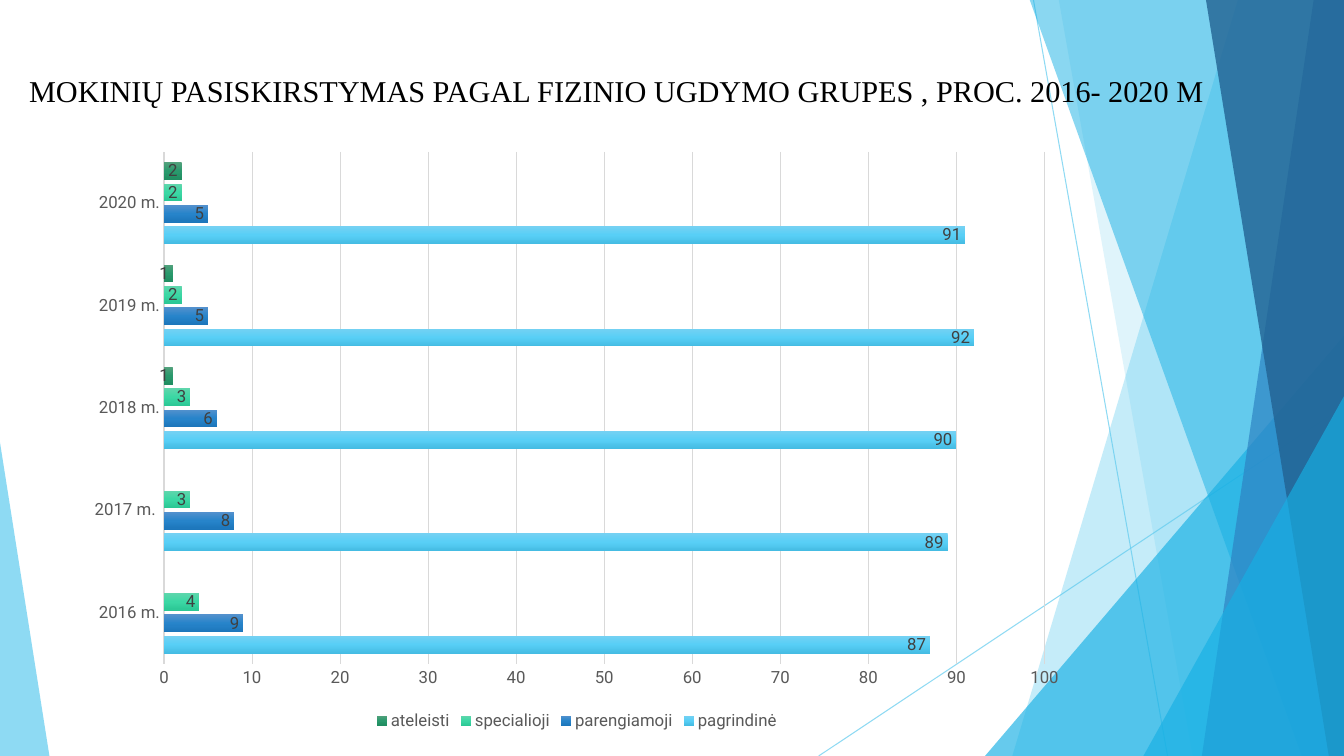
from dataclasses import dataclass

from lxml.etree import SubElement
from pptx import Presentation
from pptx.chart.data import CategoryChartData
from pptx.dml.color import RGBColor
from pptx.enum.chart import XL_CHART_TYPE, XL_LABEL_POSITION, XL_LEGEND_POSITION, XL_TICK_MARK
from pptx.enum.shapes import MSO_CONNECTOR, MSO_SHAPE
from pptx.oxml import parse_xml
from pptx.oxml.ns import nsdecls, qn
from pptx.util import Inches, Pt

COLORS = {
    "sky": "5FCBEF",
    "cyan": "17B0E4",
    "blue": "2E83C3",
    "navy": "226292",
    "title": "000000",
    "axis_text": "595959",
    "label": "404040",
    "grid": "D9D9D9",
}
WIDTH, HEIGHT, BLEED = 13.33, 7.5, -0.01
CHART_FONT = "Roboto"


@dataclass
class Ray:
    start: tuple[float, float]
    end: tuple[float, float]


@dataclass
class Band:
    """A facet reaching the right slide edge, slanting from top_x to bottom_x."""
    top_x: float
    bottom_x: float
    color: str
    opacity: int


@dataclass
class Corner:
    """A right triangle standing on the bottom edge, its apex at 0 or 1."""
    left: float
    top: float
    width: float
    apex: int
    color: str
    opacity: int


@dataclass
class Group:
    name: str
    percents: tuple[int | None, ...]
    gradient: tuple[str, str, str]


RAYS = [Ray((10.25, 0), (11.58, HEIGHT)), Ray((WIDTH, 4.03), (8.12, HEIGHT))]
FACETS = [
    Band(12.28, 10.04, "sky", 36),
    Band(10.5, 11.83, "sky", 20),
    Corner(9.77, 3.33, 3.56, 1, "cyan", 66),
    Band(10.21, 12.91, "cyan", 50),
    Band(13.03, 11.92, "blue", 70),
    Band(11.96, 13.18, "navy", 80),
    Corner(11.34, 3.93, 1.99, 1, "cyan", 66),
    Corner(0, 4.39, 0.49, 0, "sky", 70),
]
YEARS = ["2016 m.", "2017 m. ", "2018 m.", "2019 m.", "2020 m."]
GROUPS = [
    Group("pagrindinė", (87, 89, 90, 92, 91), ("75D1F3", "58CFF6", "45BCE3")),
    Group("parengiamoji", (9, 8, 6, 5, 5), ("5491CD", "2784CA", "1C76BB")),
    Group("specialioji", (4, 3, 3, 2, 2), ("60D6AC", "3BD7A4", "2CC795")),
    Group("ateleisti", (None, None, 1, 1, 2), ("54A17D", "29996C", "208D61")),
]


def rgb(name: str) -> RGBColor:
    return RGBColor.from_string(COLORS[name])


def set_opacity(properties, percent: int) -> None:
    for color in properties.iter(qn("a:srgbClr")):
        SubElement(color, qn("a:alpha"), val=str(percent * 1000))


def draw_ray(slide, ray: Ray) -> None:
    line = slide.shapes.add_connector(
        MSO_CONNECTOR.STRAIGHT, *map(Inches, ray.start + ray.end))
    line.line.color.rgb = rgb("sky")
    line.line.width = Pt(0.75)
    properties = line._element.spPr
    set_opacity(properties, 70)
    SubElement(properties, qn("a:effectLst"))


def draw_facet(slide, facet: Band | Corner) -> None:
    if isinstance(facet, Band):
        builder = slide.shapes.build_freeform(
            Inches(facet.top_x), Inches(BLEED), scale=1.0)
        corners = [(WIDTH, BLEED), (WIDTH, HEIGHT), (facet.bottom_x, HEIGHT)]
        builder.add_line_segments(
            [(Inches(x), Inches(y)) for x, y in corners], close=True)
        shape = builder.convert_to_shape()
    else:
        shape = slide.shapes.add_shape(
            MSO_SHAPE.ISOSCELES_TRIANGLE, Inches(facet.left), Inches(facet.top),
            Inches(facet.width), Inches(HEIGHT - facet.top))
        shape.adjustments[0] = facet.apex
    shape.shadow.inherit = False
    shape.fill.solid()
    shape.fill.fore_color.rgb = rgb(facet.color)
    shape.line.fill.background()
    set_opacity(shape._element.spPr, facet.opacity)


def draw_title(slide, wording: str) -> None:
    title = slide.shapes.add_textbox(
        Inches(0.19), Inches(0.67), Inches(12.64), Inches(0.72))
    title.text_frame.word_wrap = True
    run = title.text_frame.paragraphs[0].add_run()
    run.text = wording
    run.font.size = Pt(21.6)
    run.font.name = "Times New Roman"
    run.font.color.rgb = rgb("title")


def style_font(font, color: str, size: float = 12) -> None:
    font.size = Pt(size)
    font.name = CHART_FONT
    font.color.rgb = rgb(color)


def fill_gradient(series, colors: tuple[str, str, str]) -> None:
    """Fill the bars with three stops running from top to bottom."""
    stops = "".join(
        f'<a:gs pos="{index * 50000}"><a:srgbClr val="{color}"/></a:gs>'
        for index, color in enumerate(colors))
    properties = series._element.get_or_add_spPr()
    properties.insert(0, parse_xml(
        f'<a:gradFill {nsdecls("a")} rotWithShape="1"><a:gsLst>{stops}</a:gsLst>'
        '<a:lin ang="5400000" scaled="0"/></a:gradFill>'))


def draw_chart(slide) -> None:
    data = CategoryChartData()
    data.categories = YEARS
    for group in GROUPS:
        data.add_series(group.name, group.percents)
    chart = slide.shapes.add_chart(
        XL_CHART_TYPE.BAR_CLUSTERED, Inches(0.74), Inches(1.39),
        Inches(9.96), Inches(5.9), data).chart
    style_font(chart.font, "title", 10)
    chart.has_title = False
    chart.has_legend = True
    chart.legend.position = XL_LEGEND_POSITION.BOTTOM
    chart.legend.include_in_layout = False
    style_font(chart.legend.font, "axis_text")

    years, percents = chart.category_axis, chart.value_axis
    for axis in (years, percents):
        axis.major_tick_mark = axis.minor_tick_mark = XL_TICK_MARK.NONE
        style_font(axis.tick_labels.font, "axis_text")
    years.format.line.color.rgb = rgb("grid")
    years.format.line.width = Pt(1)
    percents.format.line.fill.background()
    percents.minimum_scale, percents.maximum_scale = 0, 100
    percents.major_unit = 10
    percents.has_major_gridlines = True
    percents.major_gridlines.format.line.color.rgb = rgb("grid")
    percents.major_gridlines.format.line.width = Pt(0.75)

    plot = chart.plots[0]
    plot.vary_by_categories = False
    plot.gap_width, plot.overlap = 115, -20
    for series, group in zip(plot.series, GROUPS):
        series.invert_if_negative = False
        fill_gradient(series, group.gradient)
        labels = series.data_labels
        labels.show_value = True
        labels.position = XL_LABEL_POSITION.INSIDE_END
        style_font(labels.font, "label")


def main() -> None:
    deck = Presentation()
    deck.slide_width, deck.slide_height = Inches(WIDTH), Inches(HEIGHT)
    slide = deck.slides.add_slide(deck.slide_layouts[6])
    for ray in RAYS:
        draw_ray(slide, ray)
    for facet in FACETS:
        draw_facet(slide, facet)
    draw_title(
        slide, "MOKINIŲ PASISKIRSTYMAS PAGAL FIZINIO UGDYMO GRUPES , PROC. 2016- 2020 M")
    draw_chart(slide)
    deck.save("out.pptx")


if __name__ == "__main__":
    main()
